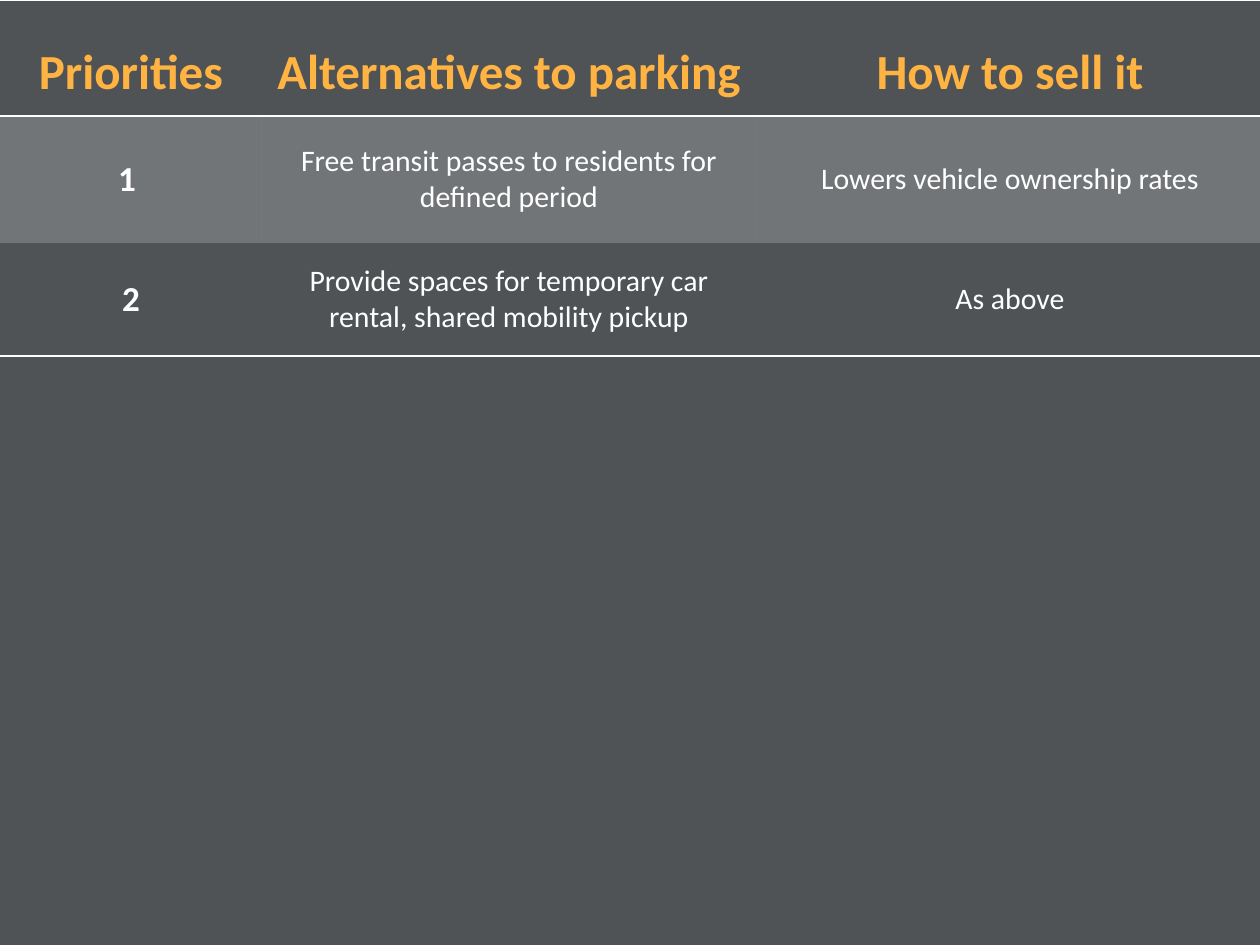
import dataclasses

import lxml.etree
import pptx
import pptx.dml.color
import pptx.enum.text
import pptx.oxml.ns
import pptx.table
import pptx.util

PX = 914400 // 126
BACKGROUND, WHITE, ORANGE = "4F5355", "FFFFFF", "FFB343"
PLAIN_TABLE = "{2D5ABB26-0587-4C30-8999-92F81FD0307C}"  # no style, no grid
COLUMN_WIDTHS = (262, 494, 508)


@dataclasses.dataclass(frozen=True)
class Row:
    texts: tuple[str, str, str]
    height: int
    header: bool = False
    tinted: bool = False
    ruled: tuple[str, ...] = ()


ROWS = (
    Row(("Priorities", "Alternatives to parking", "How to sell it"), 116,
        header=True, ruled=("lnT", "lnB")),
    Row(("1 ", "Free transit passes to residents for defined period",
         "Lowers vehicle ownership rates"), 127, tinted=True),
    Row(("2", "Provide spaces for temporary car rental, shared mobility pickup",
         "As above"), 113, ruled=("lnB",)),
)


def px(length: int) -> int:
    return length * PX


def rgb(value: str) -> pptx.dml.color.RGBColor:
    return pptx.dml.color.RGBColor.from_string(value)


def add_child(parent, tag: str, **attributes: str):
    child = lxml.etree.SubElement(parent, pptx.oxml.ns.qn(tag))
    for name, value in attributes.items():
        child.set(name, value)
    return child


def write_text(cell: pptx.table._Cell, text: str, *, size: int, color: str = WHITE,
               bold: bool = False, line_spacing: float = 1.0) -> None:
    paragraph = cell.text_frame.paragraphs[0]
    paragraph.alignment = pptx.enum.text.PP_ALIGN.CENTER
    paragraph.line_spacing = line_spacing
    run = paragraph.add_run()
    run.text = text
    run.font.name = "Calibri"
    run.font.size = pptx.util.Pt(size)
    run.font.bold = bold
    run.font.color.rgb = rgb(color)


def draw_rule(cell: pptx.table._Cell, side: str) -> None:
    line = add_child(cell._tc.get_or_add_tcPr(), f"a:{side}", w=str(pptx.util.Pt(1)))
    add_child(add_child(line, "a:solidFill"), "a:srgbClr", val=WHITE)


def fill_cell(cell: pptx.table._Cell, tinted: bool) -> None:
    if not tinted:
        cell.fill.background()
        return
    cell.fill.solid()
    cell.fill.fore_color.rgb = rgb(WHITE)
    tint = cell._tc.tcPr.find(".//" + pptx.oxml.ns.qn("a:srgbClr"))
    add_child(tint, "a:alpha", val="20000")


def draw_cell(cell: pptx.table._Cell, row: Row, column: int) -> None:
    cell.vertical_anchor = pptx.enum.text.MSO_ANCHOR.MIDDLE
    side, edge = (6, 0) if row.header else (13, 13)
    cell.margin_left = cell.margin_right = px(side)
    cell.margin_top = cell.margin_bottom = px(edge)
    for rule in row.ruled:
        draw_rule(cell, rule)
    fill_cell(cell, row.tinted)

    text = row.texts[column]
    if row.header:
        write_text(cell, text, size=28, color=ORANGE, bold=True, line_spacing=1.5)
    elif column == 0:
        write_text(cell, text, size=20, bold=True)
    else:
        write_text(cell, text, size=17)


def main() -> None:
    deck = pptx.Presentation()
    deck.slide_width = pptx.util.Inches(10)
    deck.slide_height = pptx.util.Inches(7.5)
    slide = deck.slides.add_slide(deck.slide_layouts[6])
    slide.background.fill.solid()
    slide.background.fill.fore_color.rgb = rgb(BACKGROUND)

    # Priorities table
    priorities = slide.shapes.add_table(
        len(ROWS), len(COLUMN_WIDTHS), 0, 0,
        px(sum(COLUMN_WIDTHS)), px(sum(row.height for row in ROWS))).table
    priorities.first_row = priorities.horz_banding = False
    priorities._tbl.tblPr.find(pptx.oxml.ns.qn("a:tableStyleId")).text = PLAIN_TABLE
    for column, width in enumerate(COLUMN_WIDTHS):
        priorities.columns[column].width = px(width)

    # Header and ranked alternatives
    for index, row in enumerate(ROWS):
        priorities.rows[index].height = px(row.height)
        for column in range(len(COLUMN_WIDTHS)):
            draw_cell(priorities.cell(index, column), row, column)

    deck.save("out.pptx")


if __name__ == "__main__":
    main()
